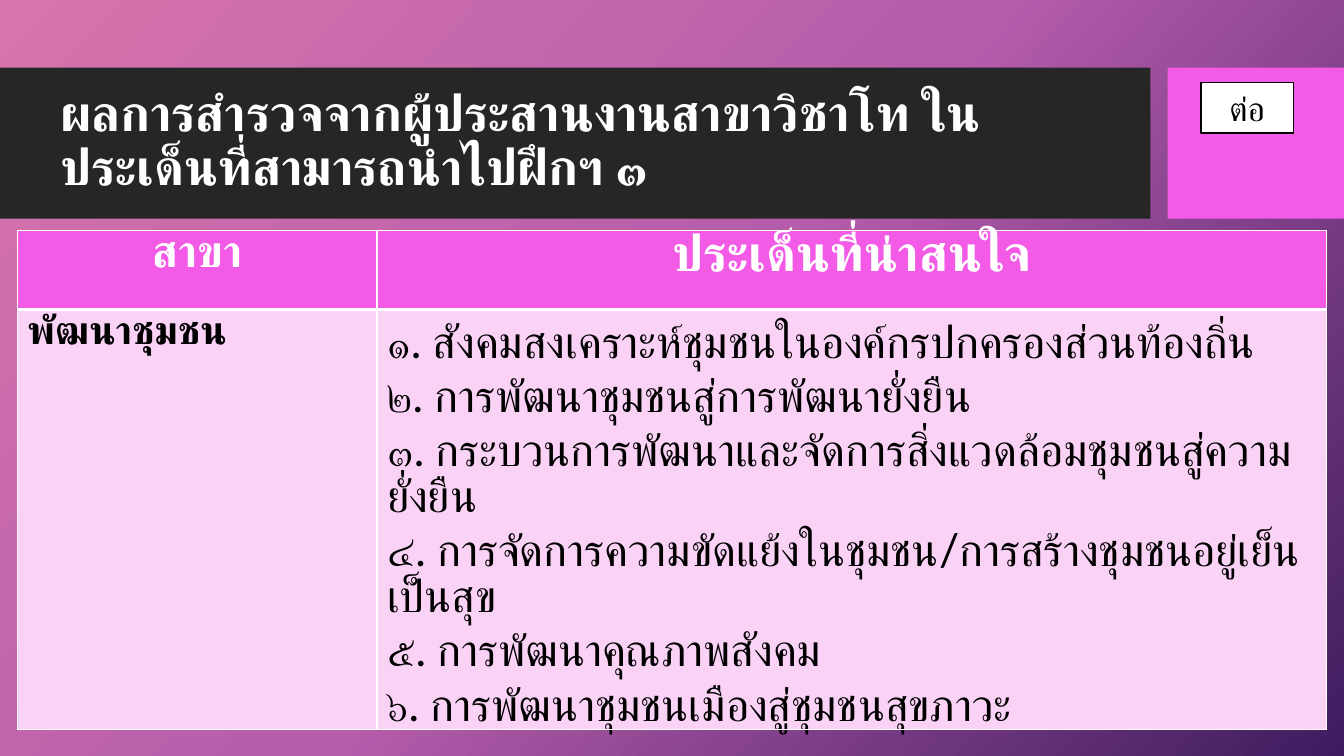
from copy import deepcopy

from lxml import etree
from pptx import Presentation
from pptx.dml.color import RGBColor
from pptx.enum.lang import MSO_LANGUAGE_ID
from pptx.enum.shapes import MSO_SHAPE
from pptx.enum.text import MSO_ANCHOR, PP_ALIGN
from pptx.oxml.ns import qn
from pptx.util import Emu, Pt

PX = 9144  # 100 px to the inch
FONT = "Lato"
RECTANGLE = MSO_SHAPE.RECTANGLE
THAI = MSO_LANGUAGE_ID.THAI
MIDDLE = MSO_ANCHOR.MIDDLE
LEFT, CENTER = PP_ALIGN.LEFT, PP_ALIGN.CENTER

WHITE = RGBColor(0xFF, 0xFF, 0xFF)
BLACK = RGBColor(0x00, 0x00, 0x00)
CHARCOAL = RGBColor(0x26, 0x26, 0x26)
PINK = RGBColor(0xF3, 0x5A, 0xE6)
PALE_PINK = RGBColor(0xFA, 0xD2, 0xF5)
BACKGROUND = [
    (0, RGBColor(0xD7, 0x74, 0xAD)),
    (0.5, RGBColor(0xB5, 0x5C, 0xAB)),
    (1, RGBColor(0x3E, 0x1C, 0x5F)),
]

TITLE = "ผลการสำรวจจากผู้ประสานงานสาขาวิชาโท ในประเด็นที่สามารถนำไปฝึกฯ ๓"
TOPICS = [
    "๑. สังคมสงเคราะห์ชุมชนในองค์กรปกครองส่วนท้องถิ่น",
    "๒. การพัฒนาชุมชนสู่การพัฒนายั่งยืน",
    "๓. กระบวนการพัฒนาและจัดการสิ่งแวดล้อมชุมชนสู่ความยั่งยืน",
    "๔. การจัดการความขัดแย้งในชุมชน/การสร้างชุมชนอยู่เย็นเป็นสุข",
    "๕. การพัฒนาคุณภาพสังคม",
    "๖. การพัฒนาชุมชนเมืองสู่ชุมชนสุขภาวะ",
]


def px(length):
    return Emu(length * PX)


class SlideBuilder:
    def __init__(self, page):
        self.page = page

    def background(self, stops, angle):
        fill = self.page.background.fill
        fill.gradient()
        fill.gradient_angle = angle
        stop_list = next(self.page.element.iter(qn("a:gsLst")))
        stop_list.insert(1, deepcopy(stop_list[0]))
        for stop, (position, color) in zip(fill.gradient_stops, stops):
            stop.position = position
            stop.color.rgb = color

    def rectangle(self, at, color, outline=None):
        box = self.page.shapes.add_shape(RECTANGLE, *map(px, at))
        box.shadow.inherit = False
        box.fill.solid()
        box.fill.fore_color.rgb = color
        if outline is None:
            box.line.fill.background()
        else:
            box.line.color.rgb = outline
            box.line.width = Pt(1)
        return box

    def text_box(self, at):
        return self.page.shapes.add_textbox(*map(px, at))

    def add_text(self, frame, lines, size, color, bold=False, align=LEFT, spacing=1.0):
        frame.word_wrap = True
        for number, line in enumerate(lines):
            para = frame.add_paragraph() if number else frame.paragraphs[0]
            para.alignment = align
            para.line_spacing = spacing
            if number:
                para.space_before = Pt(6)
            span = para.add_run()
            span.text = line
            font = span.font
            font.name, font.size, font.bold = FONT, Pt(size), bold
            font.color.rgb = color
            font.language_id = THAI
            # Thai takes its typeface from the complex-script slot
            etree.SubElement(span._r.get_or_add_rPr(), qn("a:cs"), typeface=FONT)

    def table(self, at, columns, rows):
        shape = self.page.shapes.add_table(len(rows), len(columns), *map(px, at))
        grid = shape.table
        grid.first_row = grid.horz_banding = False
        for column, width in zip(grid.columns, columns):
            column.width = px(width)
        for row, height in zip(grid.rows, rows):
            row.height = px(height)
        return grid

    def cell(self, cell, lines, size, color, fill, borders, top=0, **style):
        """Fill one cell; borders gives widths in points: left, right, top, bottom."""
        cell.margin_left = cell.margin_right = px(10)
        cell.margin_top, cell.margin_bottom = px(top), 0
        properties = cell._tc.get_or_add_tcPr()
        for side, width in zip("LRTB", borders):
            line = etree.SubElement(properties, qn(f"a:ln{side}"), w=str(Pt(width)))
            paint = etree.SubElement(line, qn("a:solidFill"))
            etree.SubElement(paint, qn("a:srgbClr"), val=str(WHITE))
        cell.fill.solid()
        cell.fill.fore_color.rgb = fill
        self.add_text(cell.text_frame, lines, size, color, spacing=0.85, **style)


def main():
    deck = Presentation()
    deck.slide_width, deck.slide_height = px(1333), px(750)
    slide = SlideBuilder(deck.slides.add_slide(deck.slide_layouts[6]))

    slide.background(BACKGROUND, 318)
    slide.rectangle((0, 67, 1141, 150), CHARCOAL)
    slide.rectangle((1158, 67, 175, 150), PINK)

    title = slide.text_box((50, 82, 1075, 118)).text_frame
    title.vertical_anchor = MIDDLE
    slide.add_text(title, [TITLE], 36, WHITE, bold=True, spacing=0.9)

    grid = slide.table((17, 229, 1299, 450), (357, 942), (78, 372))
    header, body = (1, 1, 1, 3), (1, 1, 3, 1)
    for column, (heading, size) in enumerate([("สาขา", 32), ("ประเด็นที่น่าสนใจ", 36)]):
        slide.cell(grid.cell(0, column), [heading], size, WHITE, PINK, header,
                   bold=True, align=CENTER)
    slide.cell(grid.cell(1, 0), ["พัฒนาชุมชน"], 28, BLACK, PALE_PINK, body,
               top=3, bold=True)
    slide.cell(grid.cell(1, 1), TOPICS, 32, BLACK, PALE_PINK, body, top=12)

    badge = slide.rectangle((1191, 82, 92, 50), WHITE, outline=BLACK)
    slide.add_text(badge.text_frame, ["ต่อ"], 24, BLACK, align=CENTER)

    deck.save("out.pptx")


if __name__ == "__main__":
    main()
